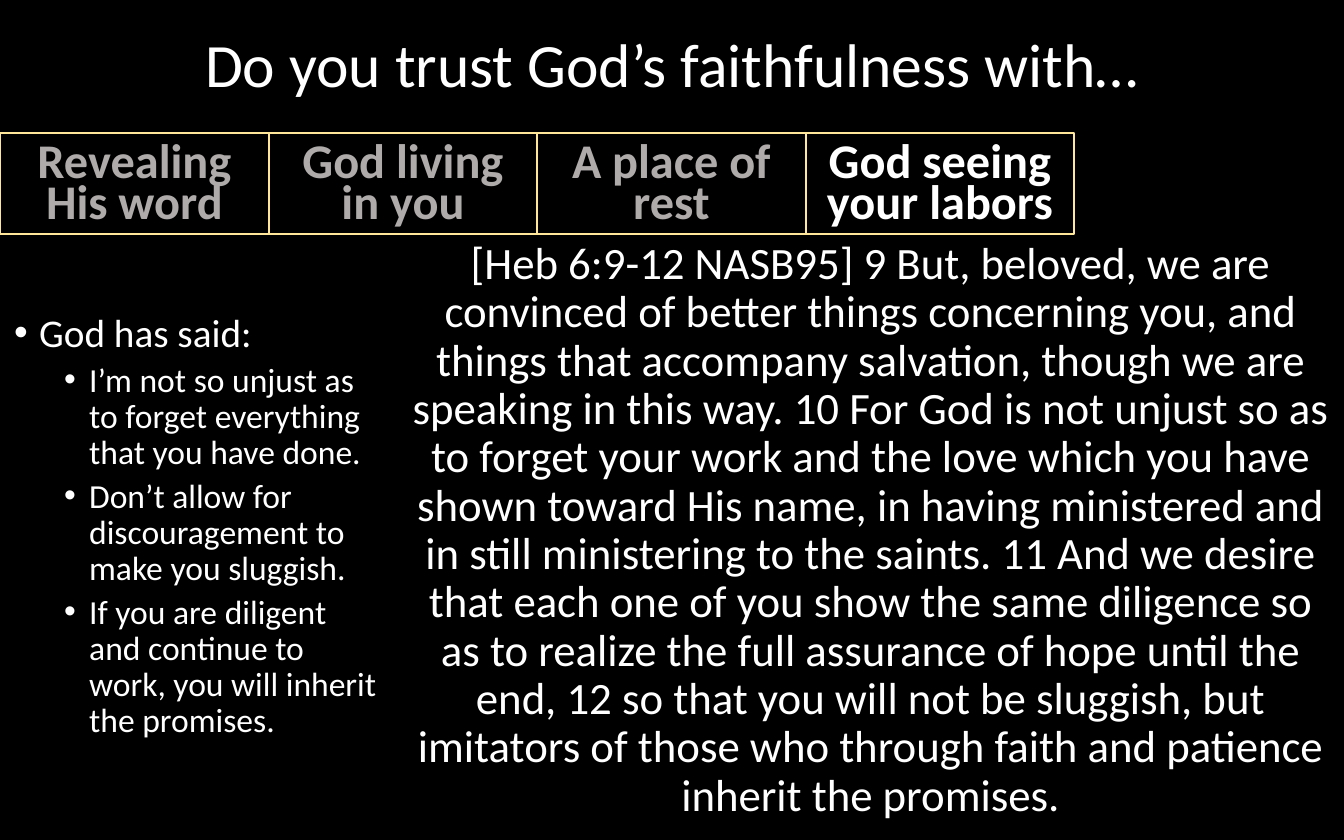
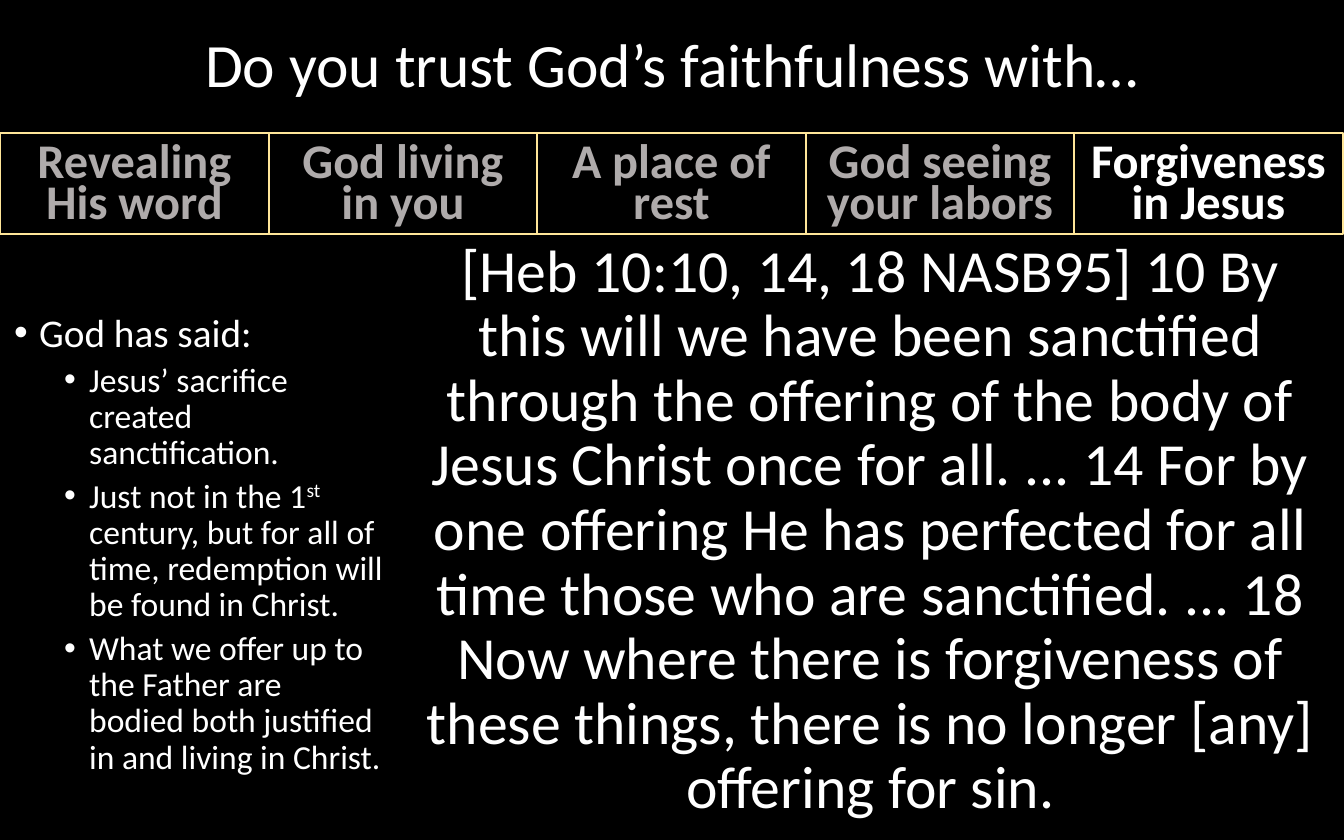
"""Build two slides on trusting God's faithfulness."""
from lxml import etree
from pptx import Presentation, util as u
from pptx.dml.color import RGBColor
from pptx.enum import shapes, text
from pptx.oxml.ns import qn

TITLE = "Do you trust God’s faithfulness with…"
TOPICS = ["Revealing His word", "God living in you", "A place of rest",
          "God seeing your labors", "Forgiveness in Jesus"]
LEAD = "God has said:"
SLIDES = [
    {
        "topics": 4,
        "points": [
            "I’m not so unjust as to forget everything that you have done.",
            "Don’t allow for discouragement to make you sluggish.",
            "If you are diligent and continue to work, you will inherit the promises.",
        ],
        "points_height": 489,
        "verse": "[Heb 6:9-12 NASB95] 9 But, beloved, we are convinced of better things "
                 "concerning you, and things that accompany salvation, though we are speaking "
                 "in this way. 10 For God is not unjust so as to forget your work and the love "
                 "which you have shown toward His name, in having ministered and in still "
                 "ministering to the saints. 11 And we desire that each one of you show the "
                 "same diligence so as to realize the full assurance of hope until the end, "
                 "12 so that you will not be sluggish, but imitators of those who through "
                 "faith and patience inherit the promises.",
        "verse_size": 24,
        "verse_margin": 13,
    },
    {
        "topics": 5,
        "points": [
            "Jesus’ sacrifice created sanctification.",
            "Just not in the 1^st^ century, but for all of time, redemption will be found "
            "in Christ.",
            "What we offer up to the Father are bodied both justified in and living in Christ.",
        ],
        "points_height": 519,
        "verse": "[Heb 10:10, 14, 18 NASB95] 10 By this will we have been sanctified through "
                 "the offering of the body of Jesus Christ once for all. ... 14 For by one "
                 "offering He has perfected for all time those who are sanctified. ... 18 Now "
                 "where there is forgiveness of these things, there is no longer [any] "
                 "offering for sin.",
        "verse_size": 32,
        "verse_margin": 18,
    },
]
COLORS = {"back": "000000", "text": "FFFFFF", "past": "AFABAB", "border": "FFE699"}
FONT, BULLET_FONT = "Calibri", "Arial"
WIDTH, HEIGHT = 1344, 840
TAB_TOP, TAB_HEIGHT, TAB_SPAN = 133, 101, 1343
SPLIT, BODY_TOP, POINTS_LEFT, POINTS_TOP = 397, 234, 1, 307
INDENT, HANG = 50, 25


def px(length):
    return u.Emu(round(length * 914400 / 134.4))


def color(name):
    return RGBColor.from_string(COLORS[name])


def write(para, words, size, shade="text", bold=False, spacing=0.9, align=text.PP_ALIGN.CENTER):
    para.alignment = align
    para.line_spacing = spacing
    for index, part in enumerate(words.split("^")):
        span = para.add_run()
        span.text = part
        span.font.name, span.font.size, span.font.bold = FONT, u.Pt(size), bold
        span.font.color.rgb = color(shade)
        if index % 2:
            span._r.get_or_add_rPr().set("baseline", "30000")


def add_box(page, left, top, width, height, anchor=text.MSO_ANCHOR.TOP):
    box = page.shapes.add_textbox(px(left), px(top), px(width), px(height))
    box.text_frame.word_wrap = True
    box.text_frame.vertical_anchor = anchor
    return box.text_frame


def add_tab(page, index, current):
    left, right = (round(TAB_SPAN * edge / len(TOPICS)) for edge in (index, index + 1))
    tab = page.shapes.add_shape(shapes.MSO_SHAPE.RECTANGLE, px(left), px(TAB_TOP),
                                px(right - left), px(TAB_HEIGHT))
    tab.shadow.inherit = False
    tab.fill.background()
    tab.line.color.rgb = color("border")
    tab.line.width = u.Pt(0.75)
    tab.text_frame.word_wrap = True
    tab.text_frame.vertical_anchor = text.MSO_ANCHOR.BOTTOM
    write(tab.text_frame.paragraphs[0], TOPICS[index], 25.9,
          "text" if current else "past", bold=True, spacing=0.7)


def add_points(page, points, height):
    frame = add_box(page, POINTS_LEFT, POINTS_TOP, SPLIT - POINTS_LEFT, height)
    for index, words in enumerate([LEAD, *points]):
        para = frame.add_paragraph() if index else frame.paragraphs[0]
        para.level = 1 if index else 0
        props = para._p.get_or_add_pPr()
        props.set("marL", str(px(HANG + INDENT * para.level)))
        props.set("indent", str(px(-HANG)))
        etree.SubElement(props, qn("a:buFont")).set("typeface", BULLET_FONT)
        etree.SubElement(props, qn("a:buChar")).set("char", "•")
        if index:
            para.space_before = u.Pt(3.8)
        write(para, words, 18 if index else 21, align=text.PP_ALIGN.LEFT)


def add_verse(page, words, size, margin):
    frame = add_box(page, SPLIT, BODY_TOP, WIDTH - SPLIT, HEIGHT - BODY_TOP)
    frame.margin_left = frame.margin_right = px(margin)
    write(frame.paragraphs[0], words, size)


def add_page(deck, content):
    page = deck.slides.add_slide(deck.slide_layouts[6])
    page.background.fill.solid()
    page.background.fill.fore_color.rgb = color("back")
    title = add_box(page, 93, 1, 1158, 133, text.MSO_ANCHOR.MIDDLE)
    write(title.paragraphs[0], TITLE, 33)
    for index in range(content["topics"]):
        add_tab(page, index, index == content["topics"] - 1)
    add_points(page, content["points"], content["points_height"])
    add_verse(page, content["verse"], content["verse_size"], content["verse_margin"])


def main():
    deck = Presentation()
    deck.slide_width, deck.slide_height = px(WIDTH), px(HEIGHT)
    for content in SLIDES:
        add_page(deck, content)
    deck.save("out.pptx")


if __name__ == "__main__":
    main()
